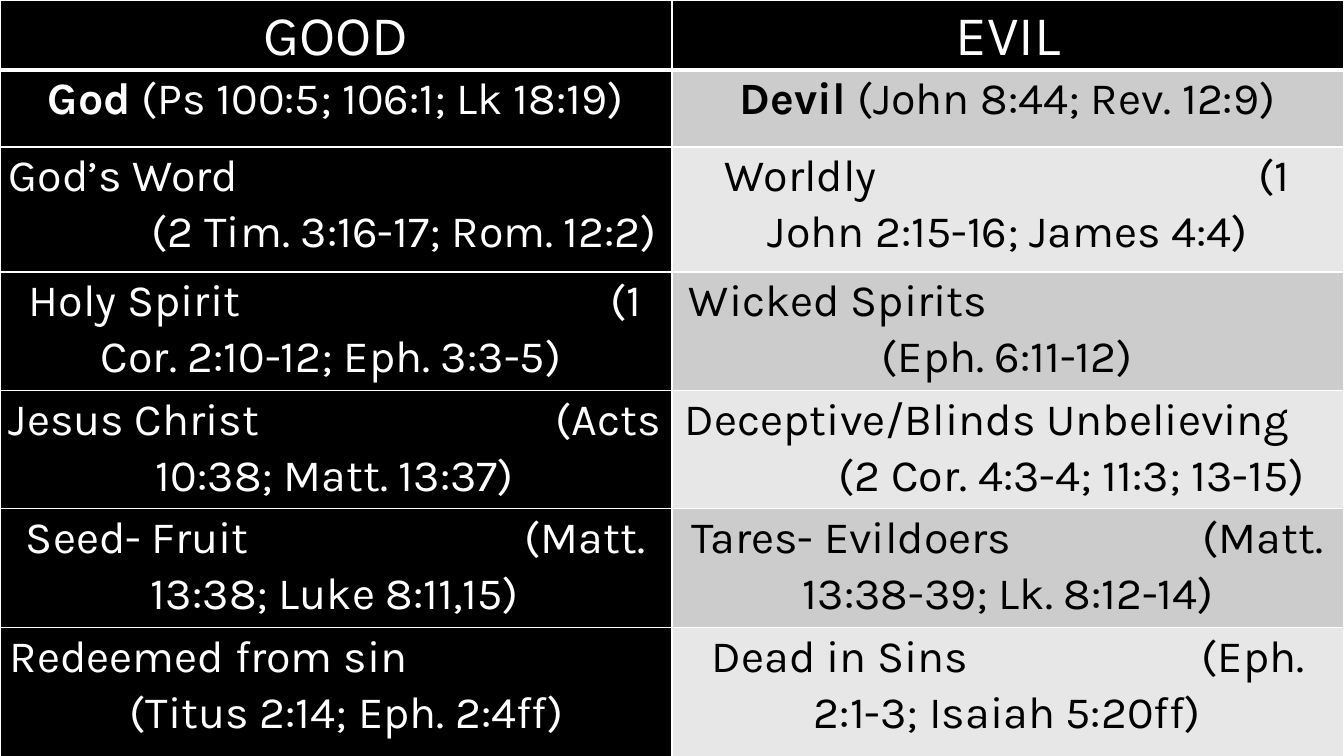
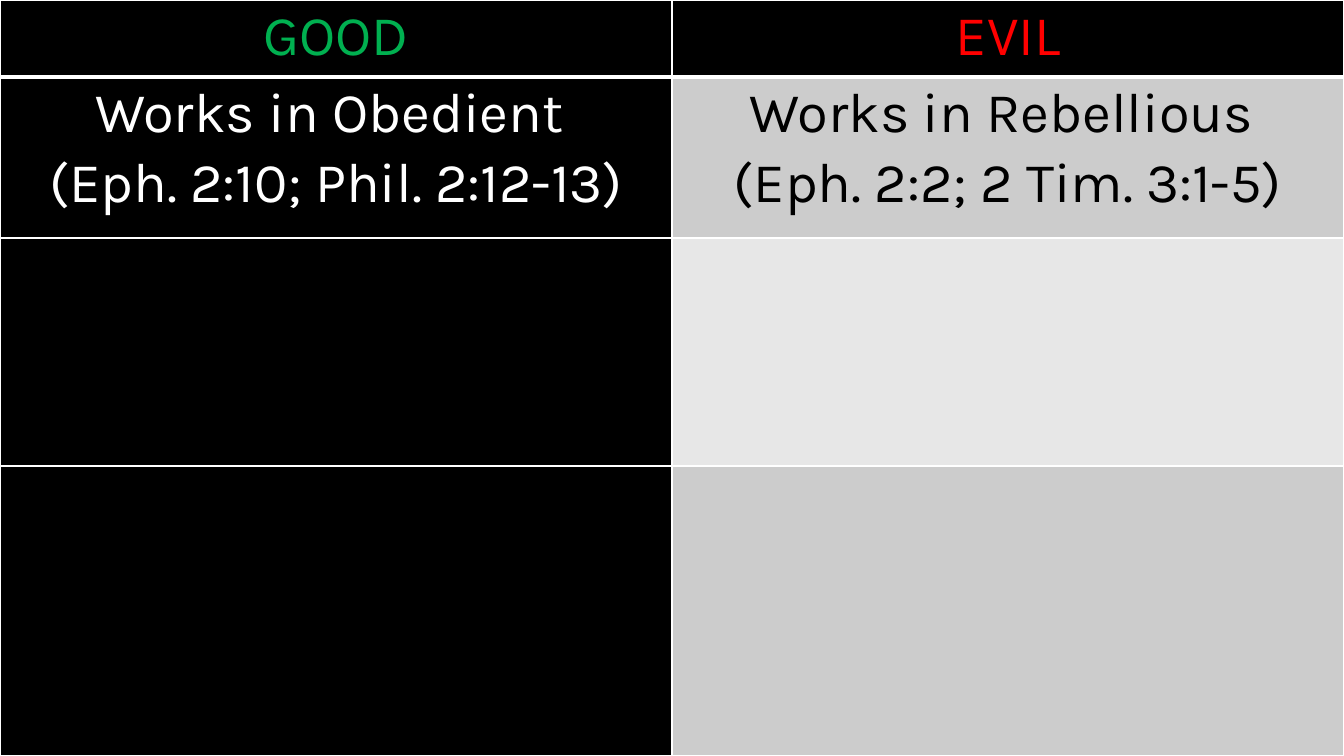
from dataclasses import dataclass

import pptx
import pptx.dml.color
import pptx.enum.text
import pptx.oxml
import pptx.oxml.ns
import pptx.util

RGBColor = pptx.dml.color.RGBColor

WHITE = RGBColor(0xFF, 0xFF, 0xFF)
BLACK = RGBColor(0x00, 0x00, 0x00)
GREEN = RGBColor(0x00, 0xB0, 0x50)
RED = RGBColor(0xFF, 0x00, 0x00)
DARK_BAND = RGBColor(0xCC, 0xCC, 0xCC)
LIGHT_BAND = RGBColor(0xE7, 0xE7, 0xE7)

SLIDE_WIDTH, SLIDE_HEIGHT = 1344, 756
EMU_PER_PX = 12192000 / SLIDE_WIDTH
CELL_INSET = 7
HEADER_SIZE = 40
BLANK_LAYOUT = 6
FONT_NAME = "Karla"
TEXT_COLORS = (WHITE, BLACK)


@dataclass(frozen=True)
class Entry:
    text: str = ""
    bold_lead: str = ""
    indent: int = 0
    tab_stops: tuple[int, ...] = ()


@dataclass(frozen=True)
class Contrast:
    header_colors: tuple[RGBColor, RGBColor]
    body_size: int
    row_heights: tuple[int, ...]
    rows: tuple[tuple[Entry, Entry], ...]


HEADERS = (Entry("GOOD"), Entry("EVIL"))

CONTRASTS = (
    Contrast(
        (WHITE, WHITE),
        32,
        (68, 77, 125, 119, 118, 119, 131),
        (
            (
                Entry(" (Ps 100:5; 106:1; Lk 18:19)", "God"),
                Entry("(John 8:44; Rev. 12:9)", "Devil "),
            ),
            (
                Entry("God’s Word\v\t(2 Tim. 3:16-17; Rom. 12:2)", "", 2, (145,)),
                Entry("Worldly\t(1\v\tJohn 2:15-16; James 4:4)", "", 46, (89, 580)),
            ),
            (
                Entry("Holy Spirit\t(1\v\tCor. 2:10-12; Eph. 3:3-5)", "", 22, (94, 604)),
                Entry("Wicked Spirits\v\t(Eph. 6:11-12)", "", 10, (203,)),
            ),
            (
                Entry("Jesus Christ\t(Acts\v\t10:38; Matt. 13:37)", "", 2, (149, 549)),
                Entry(
                    "Deceptive/Blinds Unbelieving\v\t(2 Cor. 4:3-4; 11:3; 13-15)",
                    "", 6, (160,),
                ),
            ),
            (
                Entry("Seed- Fruit\t(Matt.\v\t13:38; Luke 8:11,15)", "", 19, (144, 518)),
                Entry("Tares- Evildoers\t(Matt.\v\t13:38-39; Lk. 8:12-14)", "", 13, (124, 524)),
            ),
            (
                Entry("Redeemed from sin\v\t(Titus 2:14; Eph. 2:4ff)", "", 3, (123,)),
                Entry("Dead in Sins\t(Eph.\v\t2:1-3; Isaiah 5:20ff)", "", 33, (135, 523)),
            ),
        ),
    ),
    Contrast(
        (GREEN, RED),
        40,
        (77, 161, 228, 290),
        (
            (
                Entry("Works in Obedient \n(Eph. 2:10; Phil. 2:12-13)"),
                Entry("Works in Rebellious \n(Eph. 2:2; 2 Tim. 3:1-5)"),
            ),
            (Entry(), Entry()),
            (Entry(), Entry()),
        ),
    ),
)


def px(length: int) -> pptx.util.Emu:
    return pptx.util.Emu(round(length * EMU_PER_PX))


def set_borders(cell, top: int, bottom: int) -> None:
    properties = cell._tc.get_or_add_tcPr()
    for side, points in (("L", 1), ("R", 1), ("T", top), ("B", bottom)):
        properties.append(pptx.oxml.parse_xml(
            f'<a:ln{side} {pptx.oxml.ns.nsdecls("a")} w="{pptx.util.Pt(points)}">'
            f'<a:solidFill><a:srgbClr val="{WHITE}"/></a:solidFill></a:ln{side}>'
        ))


def set_tab_stops(paragraph, entry: Entry) -> None:
    stops = "".join(
        f'<a:tab pos="{px(stop - entry.indent)}" algn="l"/>' for stop in entry.tab_stops
    )
    tab_list = pptx.oxml.parse_xml(
        f'<a:tabLst {pptx.oxml.ns.nsdecls("a")}>{stops}</a:tabLst>'
    )
    properties = paragraph._p.get_or_add_pPr()
    properties.find(pptx.oxml.ns.qn("a:defRPr")).addprevious(tab_list)


def write_entry(cell, entry: Entry, size: int, color: RGBColor) -> None:
    cell.margin_left = px(CELL_INSET + entry.indent)
    cell.margin_right = px(CELL_INSET)
    cell.margin_top = cell.margin_bottom = 0
    if not entry.text:
        return
    frame = cell.text_frame
    if entry.bold_lead:
        lead = frame.paragraphs[0].add_run()
        lead.text = entry.bold_lead
        lead.font.bold = True
        frame.paragraphs[0].add_run().text = entry.text
    else:
        frame.text = entry.text
    for paragraph in frame.paragraphs:
        paragraph.line_spacing = 1.07
        paragraph.font.name = FONT_NAME
        paragraph.font.size = pptx.util.Pt(size)
        paragraph.font.color.rgb = color
        if entry.tab_stops:
            paragraph.alignment = pptx.enum.text.PP_ALIGN.LEFT
            set_tab_stops(paragraph, entry)
        else:
            paragraph.alignment = pptx.enum.text.PP_ALIGN.CENTER


def cell_fill(row: int, column: int) -> RGBColor:
    if row == 0 or column == 0:
        return BLACK
    return DARK_BAND if row % 2 else LIGHT_BAND


def add_contrast(deck, contrast: Contrast) -> None:
    slide = deck.slides.add_slide(deck.slide_layouts[BLANK_LAYOUT])
    slide.background.fill.solid()
    slide.background.fill.fore_color.rgb = BLACK
    rows = (HEADERS, *contrast.rows)
    table = slide.shapes.add_table(
        len(rows), len(HEADERS), 0, 0, px(SLIDE_WIDTH), px(sum(contrast.row_heights))
    ).table
    table.first_row = False
    table.horz_banding = False
    for column in table.columns:
        column.width = px(SLIDE_WIDTH // len(HEADERS))
    for row, entries in enumerate(rows):
        table.rows[row].height = px(contrast.row_heights[row])
        size = contrast.body_size if row else HEADER_SIZE
        colors = TEXT_COLORS if row else contrast.header_colors
        for column, entry in enumerate(entries):
            cell = table.cell(row, column)
            set_borders(cell, top=3 if row == 1 else 1, bottom=1 if row else 3)
            cell.fill.solid()
            cell.fill.fore_color.rgb = cell_fill(row, column)
            write_entry(cell, entry, size, colors[column])


def main() -> None:
    deck = pptx.Presentation()
    deck.slide_width = px(SLIDE_WIDTH)
    deck.slide_height = px(SLIDE_HEIGHT)
    for contrast in CONTRASTS:
        add_contrast(deck, contrast)
    deck.save("out.pptx")


if __name__ == "__main__":
    main()
